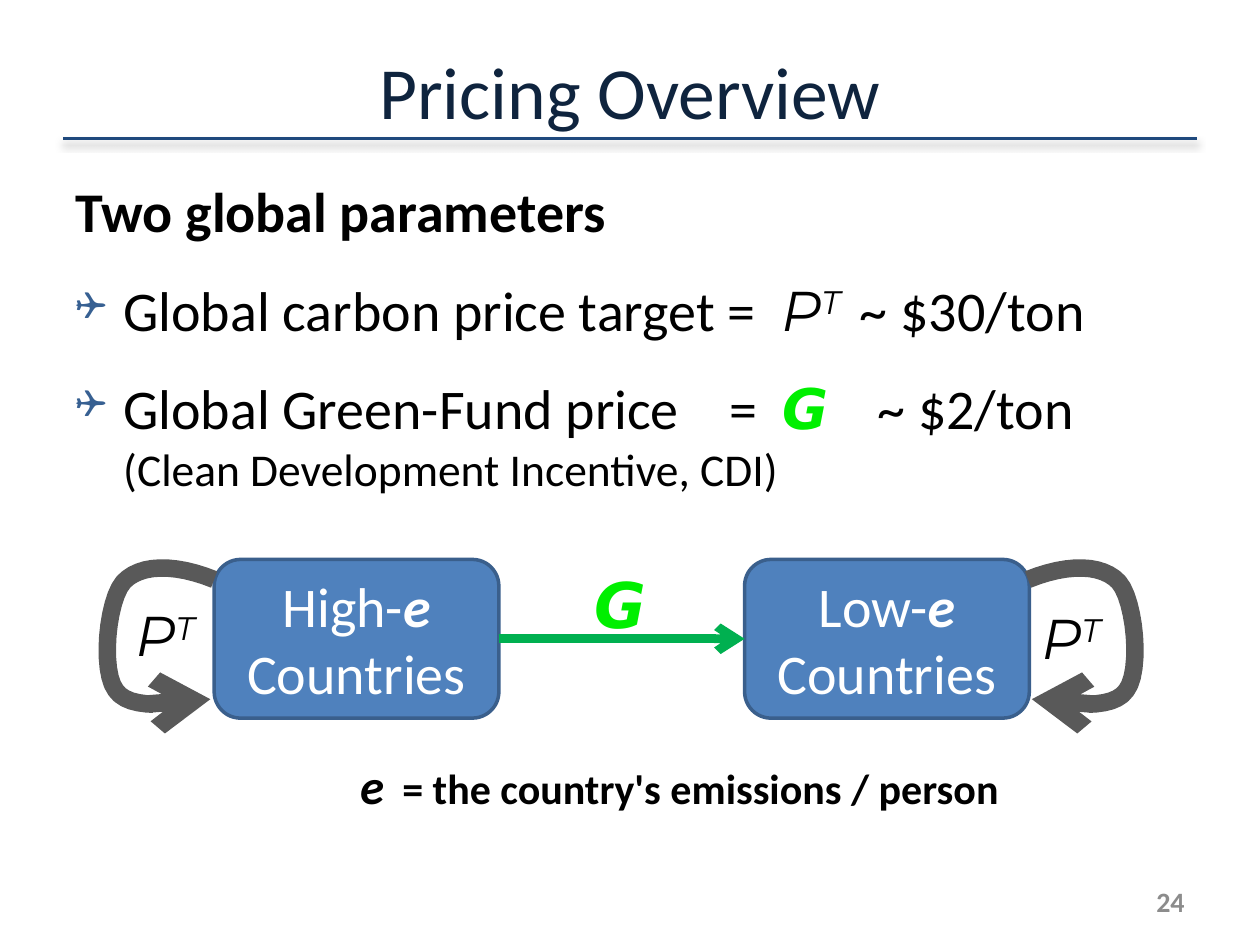
from lxml import etree
from pptx import Presentation
from pptx import util as u
from pptx.dml.color import RGBColor
from pptx.enum import shapes, text
from pptx.oxml.ns import qn

COLUMNS, ROWS = 100, 75
UNIT = u.Inches(0.1)
MIRROR = 98.6
BLACK, WHITE, NAVY, GREEN = "000000", "FFFFFF", "1F497D", "00EF00"
LEFT, CENTER, RIGHT = text.PP_ALIGN.LEFT, text.PP_ALIGN.CENTER, text.PP_ALIGN.RIGHT
TOP, MIDDLE = text.MSO_ANCHOR.TOP, text.MSO_ANCHOR.MIDDLE

TARGET = [("P", dict(font="Montserrat", italic=True)),
          ("T", dict(font="Montserrat", italic=True, raised=True))]
FUND = ("G", dict(font="DejaVu Sans", color=GREEN, bold=True, italic=True))
EMISSIONS = ("e", dict(bold=True, italic=True))
LOOP_CURVES = [
    [(17, 46), (13.8, 44.7), (11.1, 44.8), (9.8, 46.2)],
    [(9.8, 46.2), (8.5, 47.7), (8, 53.3), (9.2, 54.8)],
    [(9.2, 54.8), (10.3, 56.4), (13.8, 55.9), (16.7, 55.5)],
]


def rgb(value):
    return RGBColor.from_string(value)


def grid(*cells):
    return [round(cell * UNIT) for cell in cells]


def add_node(parent, tag, **attributes):
    node = etree.SubElement(parent, qn(tag))
    for key, value in attributes.items():
        node.set(key, str(value))
    return node


def add_run(paragraph, words, size=32, font="Calibri", color=BLACK, bold=False,
            italic=False, raised=False, gap=0):
    if words == "\n":
        paragraph.add_line_break()
        return
    run = paragraph.add_run()
    run.text = words
    run.font.size = u.Pt(size)
    run.font.name = font
    run.font.color.rgb = rgb(color)
    run.font.bold = bold
    run.font.italic = italic
    properties = run.font._element
    if raised:
        properties.set("baseline", "30000")
    if gap:
        properties.set("spc", str(gap * 100))


def write(frame, paragraphs, align=LEFT, anchor=TOP, insets=(0.1, 0.05, 0.1, 0.05),
          before=0, **style):
    frame.word_wrap = True
    frame.vertical_anchor = anchor
    (frame.margin_left, frame.margin_top,
     frame.margin_right, frame.margin_bottom) = map(u.Inches, insets)
    for index, runs in enumerate(paragraphs):
        paragraph = frame.add_paragraph() if index else frame.paragraphs[0]
        paragraph.alignment = align
        paragraph.space_before = u.Pt(before if index else 0)
        for words, own in runs:
            add_run(paragraph, words, **{**style, **own})
    return frame


def add_text(slide, cells, paragraphs, **style):
    return write(slide.shapes.add_textbox(*grid(*cells)).text_frame, paragraphs, **style)


def add_bullet(paragraph):
    properties = paragraph._p.get_or_add_pPr()
    properties.set("marL", str(u.Inches(0.38)))
    properties.set("indent", str(-u.Inches(0.38)))
    add_node(add_node(properties, "a:buClr"), "a:srgbClr", val="376092")
    add_node(properties, "a:buSzPct", val=70000)
    add_node(properties, "a:buFont", typeface="Wingdings")
    add_node(properties, "a:buChar", char="❑")


def style_line(shape, color, width, arrow=False):
    shape.line.color.rgb = rgb(color)
    shape.line.width = u.Pt(width)
    if arrow:
        add_node(shape.line._get_or_add_ln(), "a:tailEnd", type="arrow")


def add_line(slide, color, width, start=(0, 0), end=(0, 0), arrow=False):
    line = slide.shapes.add_connector(shapes.MSO_CONNECTOR.STRAIGHT, *grid(*start, *end))
    style_line(line, color, width, arrow)
    return line, add_node(line._element.spPr, "a:effectLst")


def add_title_rule(slide):
    _, effects = add_line(slide, NAVY, 1.5, (5, 11), (95, 11))
    shadow = add_node(effects, "a:outerShdw", blurRad=u.Pt(4), dist=u.Pt(3),
                      dir=5400000, rotWithShape=0)
    add_node(add_node(shadow, "a:srgbClr", val=BLACK), "a:alpha", val=40000)


def add_country_group(slide, left, level):
    group = slide.shapes.add_shape(shapes.MSO_SHAPE.ROUNDED_RECTANGLE,
                                   *grid(left, 44.4, 22.6, 12.6))
    group.shadow.inherit = False
    group.fill.solid()
    group.fill.fore_color.rgb = rgb("4F81BD")
    style_line(group, "3A5F8C", 2)
    write(group.text_frame, [[(level, {}), EMISSIONS, (" Countries", {})]],
          align=CENTER, anchor=MIDDLE, color=WHITE)
    return group


def curve_points(curve, steps=12):
    for step in range(1, steps + 1):
        t = step / steps
        weights = ((1 - t) ** 3, 3 * t * (1 - t) ** 2, 3 * t * t * (1 - t), t ** 3)
        yield tuple(sum(w * point[axis] for w, point in zip(weights, curve))
                    for axis in (0, 1))


def add_price_loop(slide, mirrored=False):
    points = [LOOP_CURVES[0][0]]
    for curve in LOOP_CURVES:
        points += curve_points(curve)
    if mirrored:
        points = [(MIRROR - x, y) for x, y in points]
    outline = [tuple(grid(*point)) for point in points]
    builder = slide.shapes.build_freeform(*outline[0])
    builder.add_line_segments(outline[1:], close=False)
    loop = builder.convert_to_shape()
    loop.shadow.inherit = False
    loop.fill.background()
    style_line(loop, "595959", 10, arrow=True)


def add_parameters(slide):
    body = add_text(slide, (5, 13.3, 90, 29), [
        [("Two global parameters", dict(bold=True))],
        [("Global carbon price target =", {}), (" ", dict(gap=7)), *TARGET,
         (" ", dict(gap=4)), ("~ $30/ton", {})],
        [("Global Green-Fund price", {}), (" ", dict(gap=21)), ("=", {}),
         (" ", dict(gap=7)), FUND, (" ", dict(gap=21)), ("~ $2/ton", {}),
         ("\n", {}), ("(Clean Development Incentive, CDI)", dict(size=26))],
    ], insets=(0.1, 0.07, 0.1, 0.05), before=18)
    for paragraph in body.paragraphs[1:]:
        add_bullet(paragraph)


def add_diagram(slide):
    high = add_country_group(slide, 17, "High-")
    low = add_country_group(slide, 59.1, "Low-")
    transfer, _ = add_line(slide, "00B050", 5, arrow=True)
    transfer.begin_connect(high, 3)
    transfer.end_connect(low, 1)
    add_text(slide, (39.5, 44.4, 19.5, 7.1), [[FUND]], align=CENTER, size=36)
    for mirrored, left, top in ((False, 9.2, 47.7), (True, 81.1, 47.9)):
        add_price_loop(slide, mirrored)
        add_text(slide, (left, top, 7.8, 5.4), [TARGET], align=CENTER, insets=(0, 0, 0, 0))


def main():
    deck = Presentation()
    deck.slide_width, deck.slide_height = grid(COLUMNS, ROWS)
    slide = deck.slides.add_slide(deck.slide_layouts[6])
    add_title_rule(slide)
    add_text(slide, (5, 3, 90, 10.3), [[("Pricing Overview", {})]], align=CENTER,
             anchor=MIDDLE, insets=(0.1, 0, 0.1, 0.2), size=42, color="0F243E")
    add_parameters(slide)
    add_diagram(slide)
    add_text(slide, (27.6, 59.5, 65, 6),
             [[("e", dict(size=28, italic=True)), (" ", dict(gap=5)),
               ("= the country's emissions / person", {})]], size=24, bold=True)
    add_text(slide, (71.7, 69.5, 23.3, 4), [[("24", {})]], align=RIGHT,
             anchor=MIDDLE, size=16, color="8C8C8C", bold=True)
    deck.save("out.pptx")


if __name__ == "__main__":
    main()
